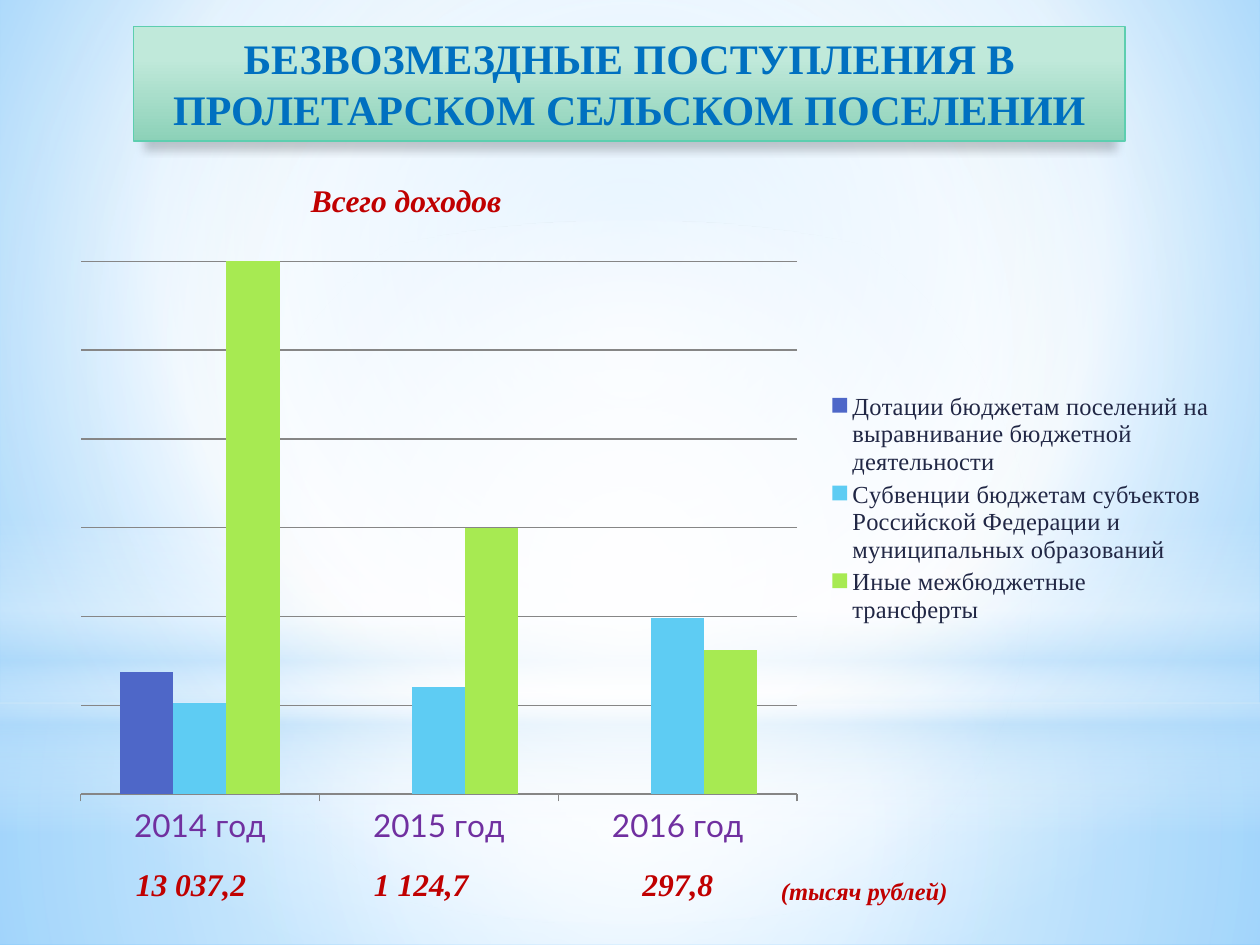
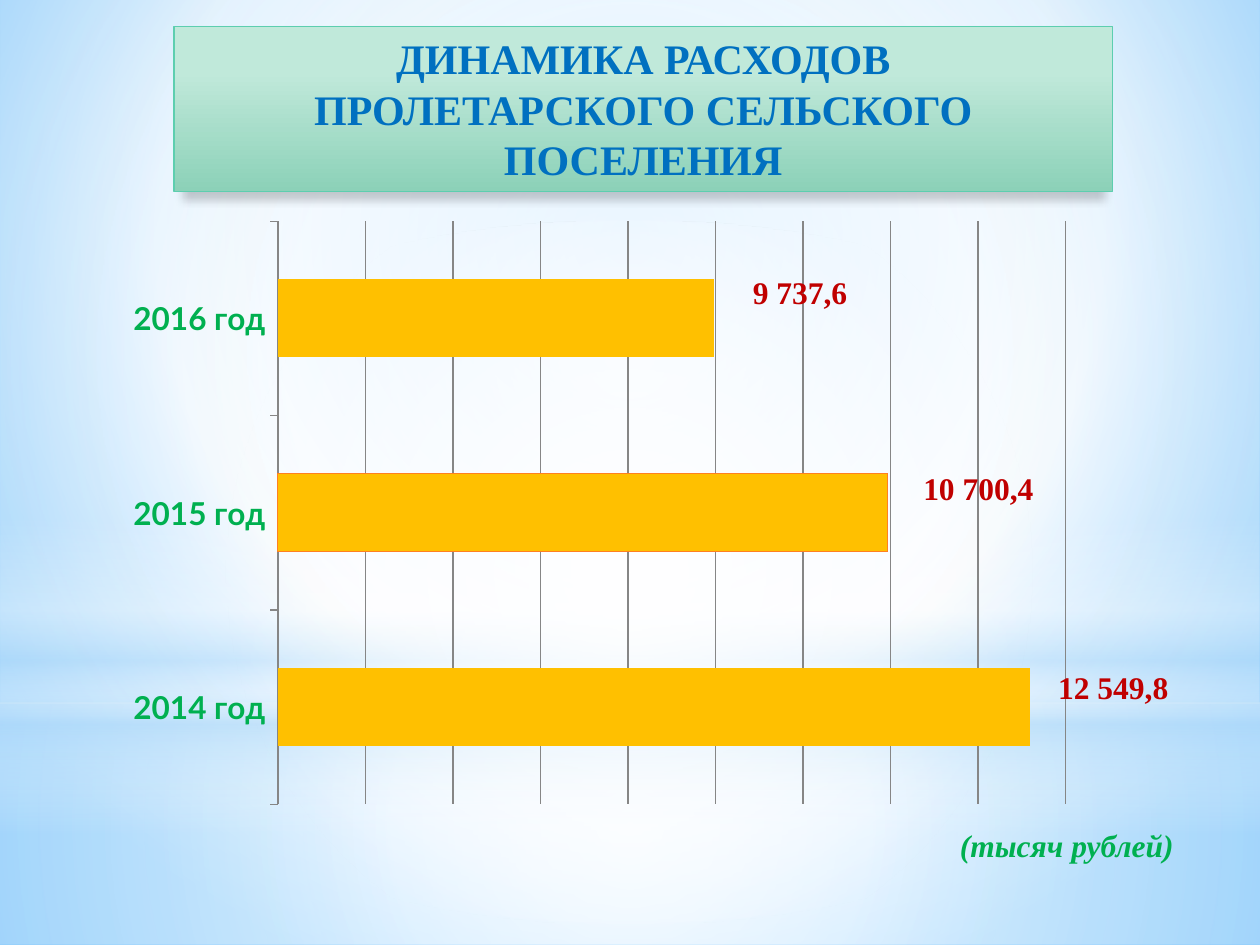
from lxml import etree
from pptx import Presentation
from pptx.chart.data import CategoryChartData
from pptx.dml.color import RGBColor
from pptx.enum.chart import XL_CHART_TYPE as ChartType, XL_LEGEND_POSITION as LegendPosition
from pptx.enum.chart import XL_TICK_LABEL_POSITION as LabelPosition, XL_TICK_MARK as TickMark
from pptx.enum.shapes import MSO_SHAPE as Preset
from pptx.enum.text import MSO_ANCHOR as Anchor, MSO_AUTO_SIZE as AutoSize, PP_ALIGN as Align
from pptx.oxml.ns import qn
from pptx.util import Inches, Pt

COLORS = {
    "title": "0070C0", "title_line": "5DCEAF", "title_top": "C0E9DA", "title_bottom": "8CD1B8",
    "amount": "C00000", "green": "00B050", "purple": "7030A0", "grid": "868686",
    "legend": "212745", "black": "000000", "white": "FFFFFF", "haze": "B4DCFA",
    "sky": "9ED5FF", "deep_sky": "5BB9FF",
    "grants": "4E67C8", "subventions": "5ECCF3", "transfers": "A7EA52",
    "expense": "FFC000", "expense_line": "FF8021",
}
SERIF, SANS = "Times New Roman", "Lato"
YEARS = ["2014 год", "2015 год", "2016 год"]
UNITS = "(тысяч рублей)"


def rgb(name):
    return RGBColor.from_string(COLORS[name])


def add_child(parent, tag, **attributes):
    child = etree.SubElement(parent, qn(tag))
    for key, value in attributes.items():
        child.set(key, str(value))
    return child


def add_color(parent, name, opacity=100):
    color = add_child(parent, "a:srgbClr", val=COLORS[name])
    if opacity < 100:
        add_child(color, "a:alpha", val=opacity * 1000)


def set_gradient(fill, properties, stops, center=None):
    """Stops are (position, colour, opacity); without a center the gradient runs downwards."""
    fill.solid()
    gradient = etree.Element(qn("a:gradFill"), rotWithShape="1")
    stop_list = add_child(gradient, "a:gsLst")
    for position, name, opacity in stops:
        add_color(add_child(stop_list, "a:gs", pos=position * 1000), name, opacity)
    if center:
        circle = add_child(gradient, "a:path", path="circle")
        sides = {side: value * 1000 for side, value in zip("ltrb", center)}
        add_child(circle, "a:fillToRect", **sides)
    else:
        add_child(gradient, "a:lin", ang=90 * 60000, scaled=0)
    properties.replace(properties.find(qn("a:solidFill")), gradient)


def add_run(paragraph, text, size, color, italic=False):
    run = paragraph.add_run()
    run.text = text
    font = run.font
    font.name, font.size, font.bold, font.italic = SERIF, Pt(size), True, italic
    font.color.rgb = rgb(color)


def build_backdrop(presentation, slide):
    """Sky gradient and soft light, placed on the slide master."""
    master = presentation.slide_master
    fill = master.background.fill
    fill.solid()
    set_gradient(fill, next(master._element.iter(qn("p:bgPr"))),
                 [(0, "sky", 100), (60, "white", 100), (100, "deep_sky", 100)], (20, 10, 20, 60))
    middle = (50, 50, 50, 50)
    layers = [
        (Preset.RECTANGLE, 5.58, 1.92, middle,
         [(0, "white", 91), (37, "white", 76), (100, "haze", 79)]),
        (Preset.RECTANGLE, 0, 5.58, middle,
         [(0, "white", 89), (48, "white", 62), (100, "haze", 79)]),
        (Preset.RECTANGLE, 4.12, 2.5, None,
         [(0, "white", 0), (29, "white", 30), (45, "haze", 40), (55, "white", 26),
          (65, "haze", 60), (100, "white", 0)]),
        (Preset.OVAL, 1.75, 5.58, middle, [(0, "white", 100), (56, "white", 0)]),
    ]
    for number, (preset, top, height, center, stops) in enumerate(layers):
        shape = slide.shapes.add_shape(preset, 0, Inches(top), Inches(10), Inches(height))
        shape.shadow.inherit = False
        shape.line.fill.background()
        set_gradient(shape.fill, shape._element.spPr, stops, center)
        shape._element.nvSpPr.cNvPr.set("id", str(100 + number))
        master.shapes._spTree.append(shape._element)


def add_title(slide, box, lines):
    shape = slide.shapes.add_shape(Preset.RECTANGLE, *map(Inches, box))
    set_gradient(shape.fill, shape._element.spPr,
                 [(28, "title_top", 100), (100, "title_bottom", 100)])
    shape.line.color.rgb, shape.line.width = rgb("title_line"), Pt(0.75)
    # Soft shadow below the band
    shape.shadow.inherit = False
    effects = shape._element.spPr.find(qn("a:effectLst"))
    shadow = add_child(effects, "a:outerShdw", blurRad=Pt(5), dist=Pt(4), dir=90 * 60000,
                       sx=98000, sy=100000, algn="b", rotWithShape=0)
    add_color(shadow, "black", 20)
    frame = shape.text_frame
    frame.word_wrap, frame.vertical_anchor = True, Anchor.TOP
    frame.auto_size = AutoSize.SHAPE_TO_FIT_TEXT
    for number, line in enumerate(lines):
        paragraph = frame.add_paragraph() if number else frame.paragraphs[0]
        paragraph.alignment = Align.CENTER
        add_run(paragraph, line, 24, "title")


def add_label(slide, box, text, size=18, color="amount", italic=True, align=Align.LEFT):
    frame = slide.shapes.add_textbox(*map(Inches, box)).text_frame
    frame.word_wrap, frame.auto_size = False, AutoSize.SHAPE_TO_FIT_TEXT
    frame.paragraphs[0].alignment = align
    add_run(frame.paragraphs[0], text, size, color, italic)


def add_year_chart(slide, box, chart_type, series, steps, top_step, label_color, bold=False):
    """The largest value, 100, stands at top_step of the grid's steps."""
    data = CategoryChartData()
    data.categories = YEARS
    for name, values, _ in series:
        data.add_series(name, values)
    chart = slide.shapes.add_chart(chart_type, *map(Inches, box), data).chart
    chart.has_title = chart.has_legend = False
    chart.font.name, chart.font.size = SANS, Pt(18)
    chart.font.color.rgb = rgb("black")

    plot = chart.plots[0]
    plot.gap_width, plot.overlap, plot.vary_by_categories = 150, 0, False
    for bars, (_, _, color) in zip(plot.series, series):
        bars.format.fill.solid()
        bars.format.fill.fore_color.rgb = rgb(color)
        bars.invert_if_negative = False

    value_axis = chart.value_axis
    value_axis.visible = False
    value_axis.minimum_scale = 0
    value_axis.major_unit = round(100 / top_step, 2)
    value_axis.maximum_scale = round(100 * steps / top_step, 2)
    value_axis.has_major_gridlines = True
    category_axis = chart.category_axis
    category_axis.major_tick_mark = TickMark.OUTSIDE
    category_axis.tick_label_position = LabelPosition.NEXT_TO_AXIS
    for line in (value_axis.major_gridlines.format.line, category_axis.format.line):
        line.color.rgb, line.width = rgb("grid"), Pt(0.75)
    font = category_axis.tick_labels.font
    font.name, font.size, font.bold = SANS, Pt(18), bold
    font.color.rgb = rgb(label_color)
    return chart


def place_plot(chart, left, top, width, height):
    plot_area = chart._chartSpace.chart.plotArea
    for old in plot_area.findall(qn("c:layout")):
        plot_area.remove(old)
    layout = etree.Element(qn("c:layout"))
    manual = add_child(layout, "c:manualLayout")
    for tag, value in (("layoutTarget", "inner"), ("xMode", "edge"), ("yMode", "edge"),
                       ("x", left), ("y", top), ("w", width), ("h", height)):
        add_child(manual, "c:" + tag, val=value)
    plot_area.insert(0, layout)


def build_receipts(slide):
    series = [
        ("Дотации бюджетам поселений на выравнивание бюджетной деятельности",
         (23, None, None), "grants"),
        ("Субвенции бюджетам субъектов Российской Федерации и муниципальных образований",
         (17, 20, 33), "subventions"),
        ("Иные межбюджетные трансферты", (100, 50, 27), "transfers"),
    ]
    chart = add_year_chart(slide, (0.26, 1.2, 9.48, 5.67), ChartType.COLUMN_CLUSTERED,
                           series, 7, 6, "purple")
    place_plot(chart, 0.04, 0.03, 0.6, 0.87)
    chart.has_legend = True
    legend = chart.legend
    legend.position, legend.include_in_layout = LegendPosition.RIGHT, False
    legend.font.name, legend.font.size = SERIF, Pt(14)
    legend.font.color.rgb = rgb("legend")

    # Totals above and below the columns
    add_label(slide, (2.37, 1.39, 1.74, 0.4), "Всего доходов")
    for left, width, total in ((0.98, 1.09, "13 037,2"), (2.87, 0.96, "1 124,7"),
                               (5, 0.77, "297,8")):
        add_label(slide, (left, 6.82, width, 0.4), total)
    add_label(slide, (6.1, 6.9, 1.54, 0.34), UNITS, size=14)
    add_title(slide, (1.06, 0.21, 7.87, 0.91),
              ["БЕЗВОЗМЕЗДНЫЕ ПОСТУПЛЕНИЯ В ПРОЛЕТАРСКОМ СЕЛЬСКОМ ПОСЕЛЕНИИ"])


def build_expenses(slide):
    chart = add_year_chart(slide, (0.89, 1.66, 8.43, 4.82), ChartType.BAR_CLUSTERED,
                           [("Расходы", (100, 81, 58), "expense")], 10, 8.6, "green", bold=True)
    # The 2015 bar is outlined
    point = chart.plots[0].series[0].points[1].format
    point.fill.solid()
    point.fill.fore_color.rgb = rgb("expense")
    point.line.color.rgb = rgb("expense_line")

    # Amounts beside the bars
    for left, top, width, amount in ((8.29, 5.25, 1.09, "12 549,8"),
                                     (7.22, 3.67, 1.09, "10 700,4"),
                                     (5.87, 2.12, 0.96, "9 737,6")):
        add_label(slide, (left, top, width, 0.4), amount, italic=False, align=Align.CENTER)
    add_label(slide, (7.52, 6.51, 1.92, 0.4), UNITS, color="green")
    add_title(slide, (1.38, 0.21, 7.45, 1.31),
              ["ДИНАМИКА РАСХОДОВ", "ПРОЛЕТАРСКОГО СЕЛЬСКОГО ПОСЕЛЕНИЯ"])


def main():
    presentation = Presentation()
    presentation.slide_width, presentation.slide_height = Inches(10), Inches(7.5)
    blank = presentation.slide_layouts[6]
    receipts, expenses = (presentation.slides.add_slide(blank) for _ in range(2))
    build_backdrop(presentation, receipts)
    build_receipts(receipts)
    build_expenses(expenses)
    presentation.save("out.pptx")


if __name__ == "__main__":
    main()
